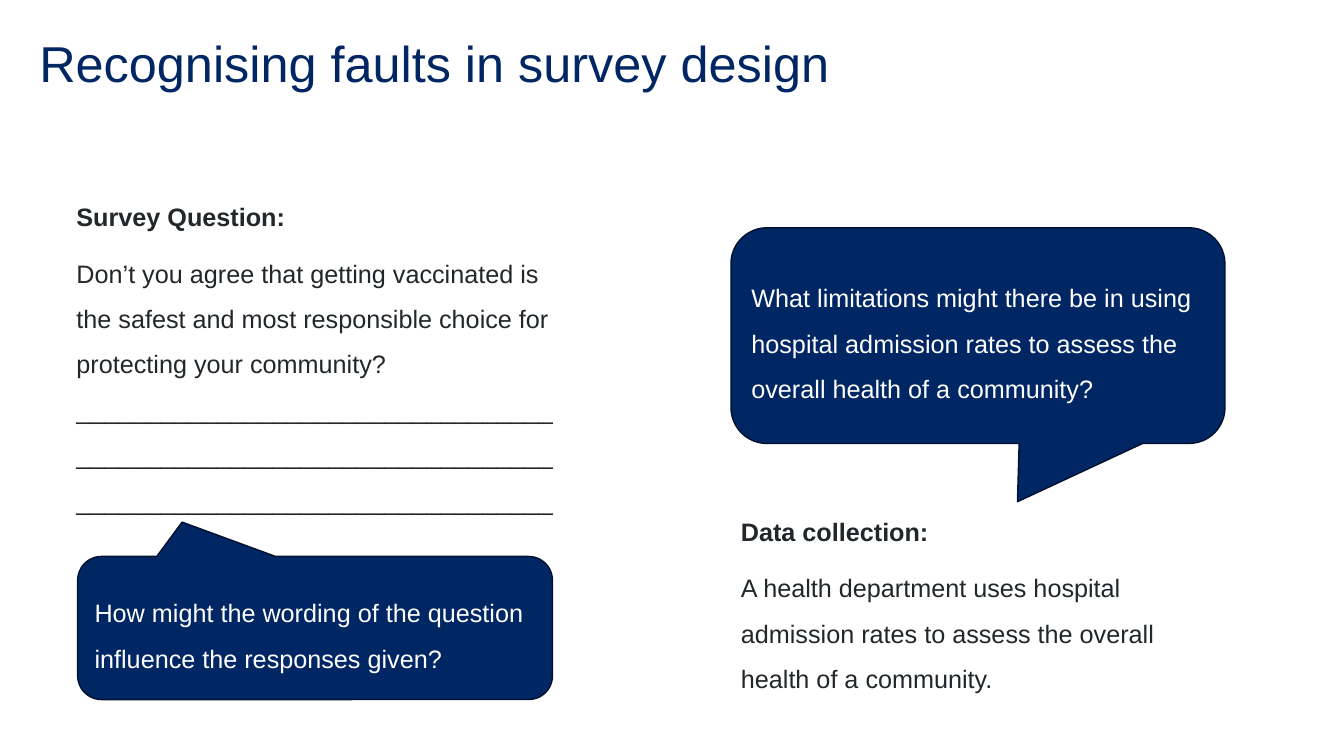
from pptx import Presentation
from pptx.dml.color import RGBColor
from pptx.enum.shapes import MSO_SHAPE
from pptx.enum.text import MSO_ANCHOR, PP_ALIGN
from pptx.util import Pt

CALLOUT = MSO_SHAPE.ROUNDED_RECTANGULAR_CALLOUT
TOP, MIDDLE = MSO_ANCHOR.TOP, MSO_ANCHOR.MIDDLE
LEFT = PP_ALIGN.LEFT

EMU_PER_PX = 9144  # 100 px to the inch
FONT = "Arial"
COLOURS = {
    "navy": "002664",
    "outline": "00112C",
    "body": "22272B",
    "white": "FFFFFF",
}
ANSWER_LINES = "_" * (3 * 34)  # three ruled lines of 34 characters


def px(*lengths):
    return [length * EMU_PER_PX for length in lengths]


def colour(name):
    return RGBColor.from_string(COLOURS[name])


def write_text(shape, paragraphs, size=18, color="body", spacing=1.5,
               after=0, bold_first=False, anchor=TOP):
    frame = shape.text_frame
    frame.word_wrap = True
    frame.vertical_anchor = anchor
    for index, text in enumerate(paragraphs):
        paragraph = frame.add_paragraph() if index else frame.paragraphs[0]
        paragraph.alignment = LEFT
        paragraph.line_spacing = spacing
        paragraph.space_after = Pt(after)
        run = paragraph.add_run()
        run.text = text
        run.font.name = FONT
        run.font.size = Pt(size)
        run.font.bold = bold_first and index == 0
        run.font.color.rgb = colour(color)


def add_title(slide, box, text):
    shape = slide.shapes.add_textbox(*px(*box))
    frame = shape.text_frame
    frame.margin_left = frame.margin_right = 0
    frame.margin_top = frame.margin_bottom = 0
    write_text(shape, [text], size=36, color="navy", spacing=0.9)


def add_example(slide, box, heading, text):
    shape = slide.shapes.add_textbox(*px(*box))
    write_text(shape, [heading, text], after=8, bold_first=True)


def add_callout(slide, box, tip, question):
    shape = slide.shapes.add_shape(CALLOUT, *px(*box))
    shape.shadow.inherit = False
    shape.adjustments[0], shape.adjustments[1] = tip
    shape.fill.solid()
    shape.fill.fore_color.rgb = colour("navy")
    shape.line.color.rgb = colour("outline")
    shape.line.width = Pt(1)
    write_text(shape, [question], color="white", anchor=MIDDLE)


def main():
    presentation = Presentation()
    presentation.slide_width, presentation.slide_height = px(1333, 750)
    slide = presentation.slides.add_slide(presentation.slide_layouts[6])

    add_title(slide, (39, 39, 1256, 60), "Recognising faults in survey design")

    # Examples of faulty design
    add_example(slide, (66, 180, 501, 334), "Survey Question:",
                "Don’t you agree that getting vaccinated is the safest and most "
                "responsible choice for protecting your community? " + ANSWER_LINES)
    add_example(slide, (725, 492, 490, 197), "Data collection:",
                "A health department uses hospital admission rates to assess "
                "the overall health of a community.")

    # Questions pointing at the examples
    add_callout(slide, (77, 552, 471, 142), (-0.28, -0.74),
                "How might the wording of the question influence the "
                "responses given?")
    add_callout(slide, (725, 226, 490, 214), (0.08, 0.77),
                "What limitations might there be in using hospital admission "
                "rates to assess the overall health of a community?")

    presentation.save("out.pptx")


if __name__ == "__main__":
    main()
